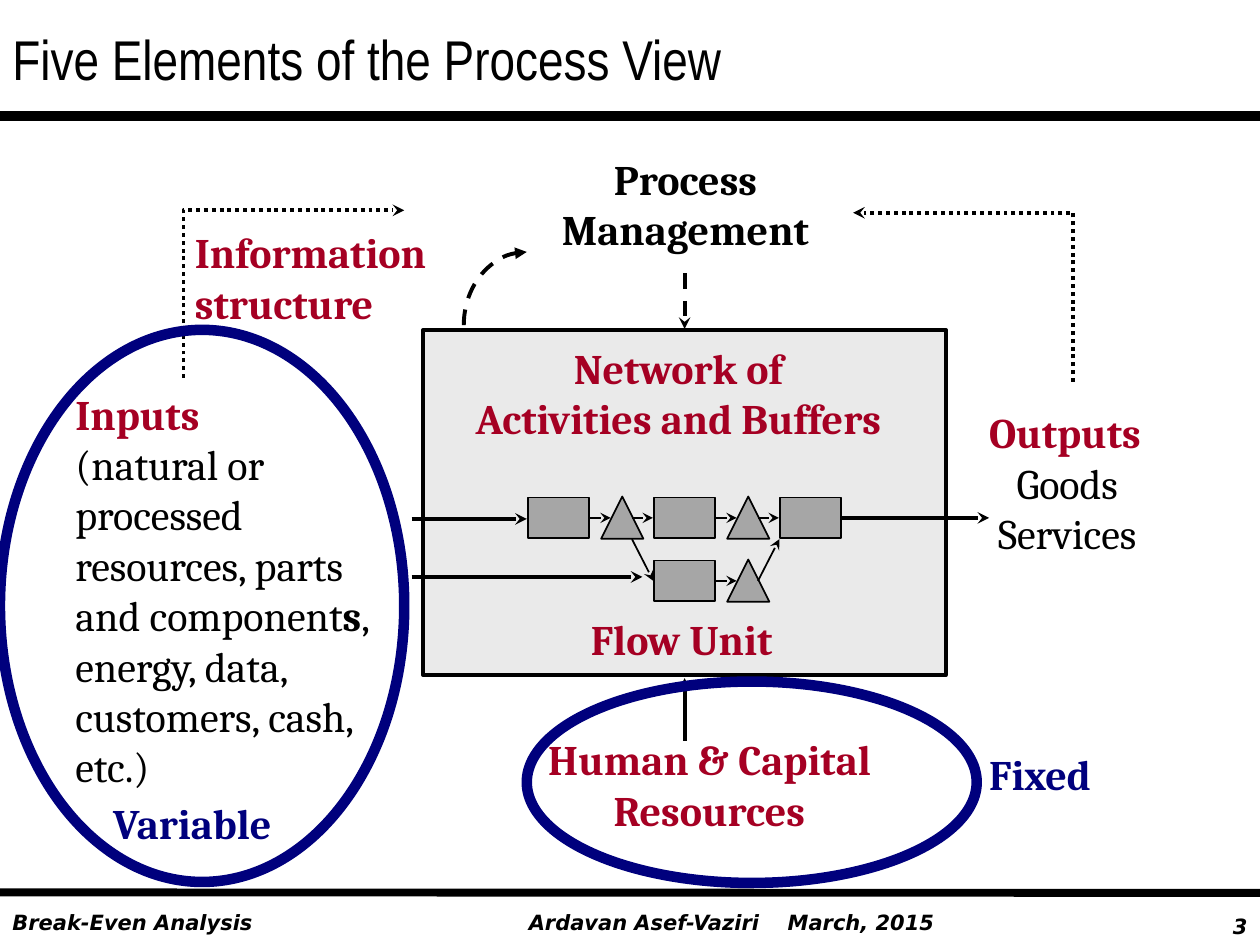
import pptx
import pptx.dml.color
import pptx.enum.dml
import pptx.enum.shapes
import pptx.enum.text
import pptx.oxml
import pptx.oxml.ns
import pptx.util

Cm = pptx.util.Cm
SHAPES = pptx.enum.shapes.MSO_SHAPE
DASHES = pptx.enum.dml.MSO_LINE
ALIGN = pptx.enum.text.PP_ALIGN
ANCHOR = pptx.enum.text.MSO_ANCHOR

BLACK, RED, NAVY = "000000", "A50023", "00007D"
PANEL_GRAY, STEP_GRAY = "EAEAEA", "A6A6A6"

BODY = {"name": "Cambria", "size": pptx.util.Pt(24), "bold": False}
HEADING = {**BODY, "bold": True}
TITLE = {"name": "Arial Narrow", "size": pptx.util.Pt(32)}
FOOTER = {"name": "DejaVu Sans", "size": pptx.util.Pt(12), "bold": True, "italic": True}

# Grid of the process network, in centimetres
STEP_LEFT, STEP_TOP, STEP_WIDTH, STEP_HEIGHT = 10.64, 10.03, 1.24, 0.81
COLUMN_PITCH, ROW_PITCH = 2.54, 1.27
BUFFER_OFFSET, BUFFER_SIZE = 1.48, 0.85
FLOW_Y = 10.44


def color(hex_string):
    return pptx.dml.color.RGBColor.from_string(hex_string)


def add_element(parent, tag, **attributes):
    child = pptx.oxml.parse_xml(f"<{tag} {pptx.oxml.ns.nsdecls('a')}/>")
    for name, value in attributes.items():
        child.set(name, value)
    parent.append(child)
    return child


def format_line(shape, width, line_color=BLACK, dash=None, arrow=None):
    shape.line.color.rgb = color(line_color)
    shape.line.width = pptx.util.Pt(width)
    if dash is not None:
        shape.line.dash_style = dash
    if arrow:
        line = shape._element.find(".//" + pptx.oxml.ns.qn("a:ln"))
        add_element(line, "a:tailEnd", type=arrow)


def format_fill(shape, fill):
    shape.shadow.inherit = False
    if fill:
        shape.fill.solid()
        shape.fill.fore_color.rgb = color(fill)
    else:
        shape.fill.background()


def add_shape(slide, kind, box, fill, width, line_color=BLACK):
    shape = slide.shapes.add_shape(kind, *map(Cm, box))
    format_fill(shape, fill)
    format_line(shape, width, line_color)
    return shape


def add_line(slide, start, end, width=2.25, dash=None, arrow="stealth"):
    connector = slide.shapes.add_connector(
        pptx.enum.shapes.MSO_CONNECTOR.STRAIGHT, *map(Cm, start + end))
    format_line(connector, width, dash=dash, arrow=arrow)
    add_element(connector._element.spPr, "a:effectLst")


def add_dotted_path(slide, points):
    start, *others = [tuple(map(Cm, point)) for point in points]
    builder = slide.shapes.build_freeform(*start)
    builder.add_line_segments(others, close=False)
    shape = builder.convert_to_shape()
    format_fill(shape, None)
    format_line(shape, 2.25, dash=DASHES.ROUND_DOT, arrow="stealth")


def add_curved_arrow(slide, box):
    """Upper left quarter of an ellipse that fills the box."""
    arc = slide.shapes.add_shape(SHAPES.ARC, *map(Cm, box))
    arc.adjustments[0], arc.adjustments[1] = 108, 162
    format_fill(arc, None)
    format_line(arc, 2.25, dash=DASHES.DASH, arrow="triangle")


def add_text(slide, box, paragraphs, anchor=ANCHOR.TOP):
    """Each paragraph is (alignment, [(text, font format, color), ...])."""
    text_box = slide.shapes.add_textbox(*map(Cm, box))
    frame = text_box.text_frame
    frame.word_wrap = True
    frame.vertical_anchor = anchor
    for index, (alignment, runs) in enumerate(paragraphs):
        paragraph = frame.paragraphs[0] if index == 0 else frame.add_paragraph()
        paragraph.alignment = alignment
        for text, font_format, text_color in runs:
            run = paragraph.add_run()
            run.text = text
            for name, value in font_format.items():
                setattr(run.font, name, value)
            run.font.color.rgb = color(text_color)
    return text_box


def add_label(slide, box, lines, text_color=RED, alignment=ALIGN.LEFT):
    add_text(slide, box, [(alignment, [(line, HEADING, text_color)]) for line in lines])


def add_frame(slide):
    # Footer, rules and title
    add_text(slide, (23.5, 18.29, 1.9, 0.76), [(ALIGN.RIGHT, [("3", FOOTER, BLACK)])])
    author = add_text(slide, (10.41, 18.21, 10.13, 0.76),
                      [(ALIGN.LEFT, [("Ardavan Asef-Vaziri\tMarch, 2015", FOOTER, BLACK)])])
    properties = author.text_frame.paragraphs[0]._p.get_or_add_pPr()
    tabs = add_element(properties, "a:tabLst")
    add_element(tabs, "a:tab", pos=str(Cm(5.22)), algn="l")
    add_text(slide, (0, 18.21, 10, 0.76), [(ALIGN.LEFT, [("Break-Even Analysis", FOOTER, BLACK)])])
    add_line(slide, (0, 2.34), (25.4, 2.34), 6, arrow=None)
    add_line(slide, (0, 17.99), (25.4, 18), 4.5, arrow=None)
    add_text(slide, (0, 0, 25.4, 2.34),
             [(ALIGN.LEFT, [("Five Elements of the Process View", TITLE, BLACK)])], ANCHOR.MIDDLE)


def add_network(slide):
    # Activities (squares) and buffers (triangles) as (column, row)
    for column, row in [(0, 0), (1, 0), (2, 0), (1, 1)]:
        add_shape(slide, SHAPES.RECTANGLE,
                  (STEP_LEFT + column * COLUMN_PITCH, STEP_TOP + row * ROW_PITCH,
                   STEP_WIDTH, STEP_HEIGHT), STEP_GRAY, 1)
    for column, row in [(0, 0), (1, 0), (1, 1)]:
        add_shape(slide, SHAPES.ISOSCELES_TRIANGLE,
                  (STEP_LEFT + BUFFER_OFFSET + column * COLUMN_PITCH,
                   STEP_TOP - 0.02 + row * ROW_PITCH, BUFFER_SIZE, BUFFER_SIZE), STEP_GRAY, 1)

    # Flow between them
    for column, row in [(0, 0), (1, 0), (1, 1)]:
        x = STEP_LEFT + STEP_WIDTH + column * COLUMN_PITCH
        y = FLOW_Y + row * ROW_PITCH
        add_line(slide, (x, y), (x + 0.43, y), 1)
        if row == 0:
            add_line(slide, (x + 0.86, y), (x + 1.28, y), 1)
    add_line(slide, (12.74, 10.87), (13.17, 11.71), 1)
    add_line(slide, (15.28, 11.71), (15.71, 10.87), 1)

    # Flow in and out
    add_line(slide, (16.96, FLOW_Y), (19.94, FLOW_Y))
    add_line(slide, (8.3, 10.46), (10.62, 10.46))
    add_line(slide, (8.3, 11.63), (12.95, 11.63))


def main():
    presentation = pptx.Presentation()
    presentation.slide_width, presentation.slide_height = Cm(25.4), Cm(19.05)
    slide = presentation.slides.add_slide(presentation.slide_layouts[6])
    add_frame(slide)

    # Process panel
    add_shape(slide, SHAPES.RECTANGLE, (8.53, 6.65, 10.54, 6.96), PANEL_GRAY, 2)
    add_line(slide, (13.8, 5.51), (13.8, 6.63), dash=DASHES.DASH)
    add_line(slide, (13.8, 14.93), (13.8, 13.67))
    add_label(slide, (9.14, 6.78, 9.07, 2.31),
              ["Network of", "Activities and Buffers"], alignment=ALIGN.CENTER)
    add_network(slide)
    add_label(slide, (11.66, 12.24, 4.45, 1.3), ["Flow Unit"])

    # Management and information
    add_label(slide, (11, 2.97, 5.64, 2.31), ["Process", "Management"], BLACK, ALIGN.CENTER)
    add_label(slide, (3.68, 4.45, 5.28, 2.31), ["Information", "structure"])
    add_dotted_path(slide, [(21.64, 7.7), (21.64, 4.29), (17.2, 4.29)])
    add_dotted_path(slide, [(3.7, 7.62), (3.7, 4.24), (8.15, 4.24)])
    add_curved_arrow(slide, (9.35, 5.08, 2.54, 2.95))

    # Inputs and outputs
    add_text(slide, (1.27, 7.7, 7.26, 8.46), [
        (ALIGN.LEFT, [("Inputs", HEADING, RED)]),
        (ALIGN.LEFT, [("(natural or processed resources, parts and component", BODY, BLACK),
                      ("s", HEADING, BLACK),
                      (", energy, data, customers, cash, etc.)", BODY, BLACK)])])
    add_text(slide, (19.69, 8.08, 3.65, 4.37), [
        (ALIGN.LEFT, [("Outputs", HEADING, RED)]),
        (ALIGN.CENTER, [("Goods", BODY, BLACK)]),
        (ALIGN.CENTER, [("Services", BODY, BLACK)])])

    # Resources
    add_label(slide, (10.8, 14.66, 7.44, 1.3), ["Human & Capital"])
    add_label(slide, (12.12, 15.7, 4.45, 1.3), ["Resources"])

    # Cost types
    add_shape(slide, SHAPES.OVAL, (0, 6.65, 8.15, 11.13), None, 6, NAVY)
    add_label(slide, (2.03, 15.95, 3.89, 1.3), ["Variable"], NAVY)
    add_shape(slide, SHAPES.OVAL, (10.62, 13.74, 9.07, 4.06), None, 6, NAVY)
    add_label(slide, (19.69, 14.96, 2.64, 1.3), ["Fixed"], NAVY)

    presentation.save("out.pptx")


if __name__ == "__main__":
    main()
